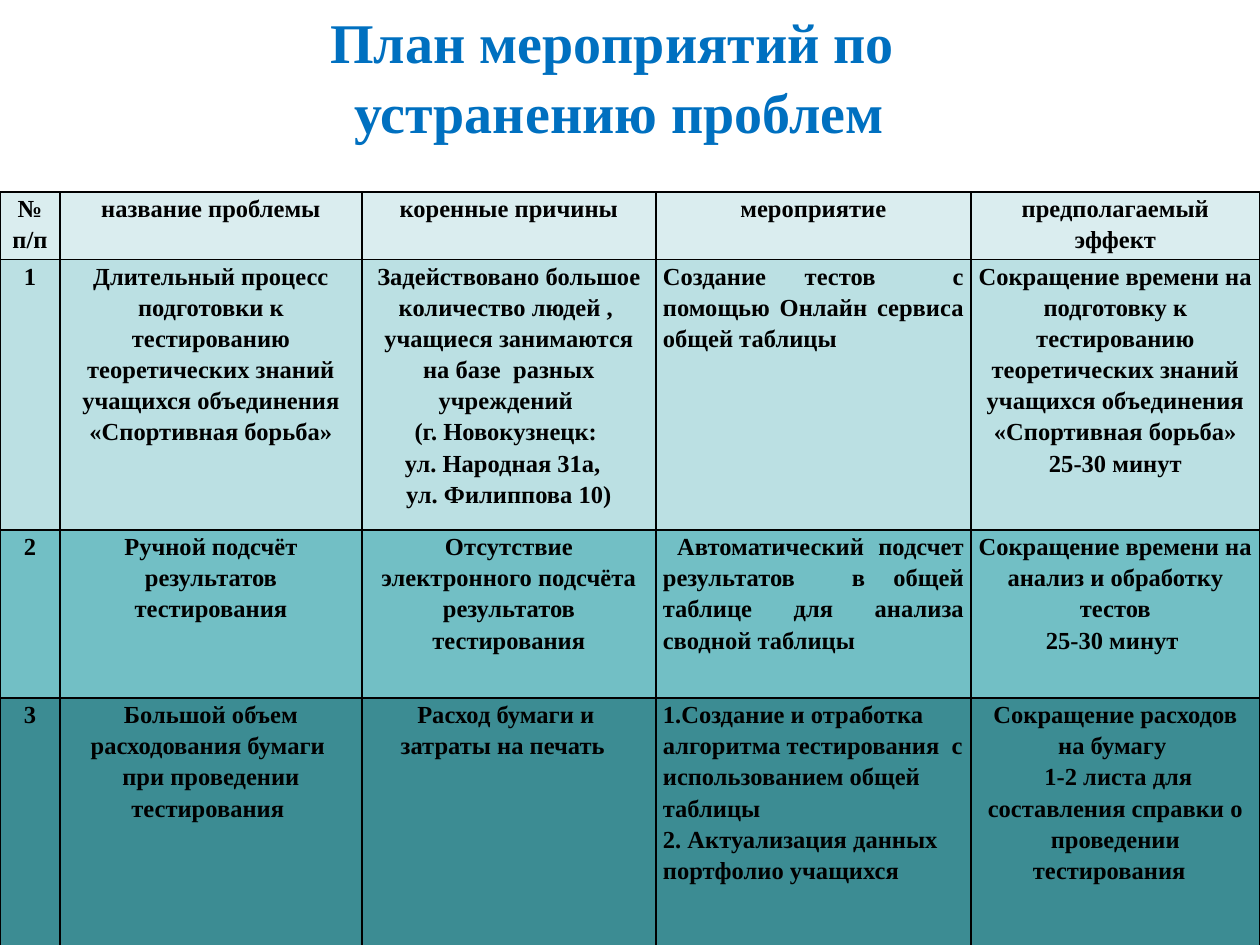
"""Build a slide with the action plan table for solving problems."""
from dataclasses import dataclass

from lxml import etree
from pptx import Presentation
from pptx import util as u
from pptx.dml.color import RGBColor
from pptx.enum import text
from pptx.oxml import ns

SCALE = 914400 / 126


@dataclass(frozen=True)
class Theme:
    font: str = "Times New Roman"
    title_size: int = 32
    table_size: int = 14
    title: str = "0070C0"
    ink: str = "000000"


@dataclass(frozen=True)
class Row:
    height: int
    fill: str
    cells: tuple[str, ...]
    action_align: text.PP_ALIGN = text.PP_ALIGN.CENTER


THEME = Theme()
ACTION_COLUMN = 3
COLUMN_WIDTHS = (60, 302, 294, 315, 289)
TITLE_LINES = ("План мероприятий по", " устранению проблем")
ROWS = (
    Row(65, "DAEDEF", (
        "№ п/п", "название проблемы", "коренные причины", "мероприятие",
        "предполагаемый эффект")),
    Row(214, "BBE0E3", (
        "1",
        "Длительный процесс подготовки к тестированию теоретических знаний "
        "учащихся объединения «Спортивная борьба»",
        "Задействовано большое количество людей ,  учащиеся занимаются на базе  "
        "разных учреждений \n(г. Новокузнецк: \nул. Народная 31а,  \nул. Филиппова 10)",
        "Создание тестов  с помощью Онлайн сервиса общей таблицы ",
        "Сокращение времени на подготовку к тестированию теоретических знаний "
        "учащихся объединения «Спортивная борьба»\n25-30 минут"),
        text.PP_ALIGN.JUSTIFY),
    Row(168, "72BFC5", (
        "2",
        "Ручной подсчёт результатов тестирования",
        "Отсутствие электронного подсчёта результатов тестирования",
        " Автоматический подсчет результатов  в общей таблице для анализа "
        "сводной таблицы",
        "Сокращение времени на анализ и обработку тестов\n25-30 минут "),
        text.PP_ALIGN.JUSTIFY),
    Row(270, "3C8C93", (
        "3",
        "Большой объем расходования бумаги  при проведении тестирования ",
        "Расход бумаги и \nзатраты на печать  ",
        "1.Создание и отработка алгоритма тестирования  с использованием "
        "общей таблицы\n2. Актуализация данных портфолио учащихся",
        "Сокращение расходов на бумагу \n 1-2 листа для составления справки "
        "о проведении тестирования  "),
        text.PP_ALIGN.LEFT),
)


def px(length: int) -> u.Emu:
    return u.Emu(round(length * SCALE))


def add_run(paragraph, content: str, size: int, color: str) -> None:
    run = paragraph.add_run()
    run.text = content
    run.font.name = THEME.font
    run.font.size = u.Pt(size)
    run.font.bold = True
    run.font.color.rgb = RGBColor.from_string(color)


def add_borders(cell) -> None:
    properties = cell._tc.get_or_add_tcPr()
    for side in ("a:lnL", "a:lnR", "a:lnT", "a:lnB"):
        line = etree.SubElement(properties, ns.qn(side), w=str(u.Pt(1)))
        fill = etree.SubElement(line, ns.qn("a:solidFill"))
        etree.SubElement(fill, ns.qn("a:srgbClr"), val=THEME.ink)


def fill_cell(cell, content: str, fill: str, align: text.PP_ALIGN) -> None:
    add_borders(cell)
    cell.fill.solid()
    cell.fill.fore_color.rgb = RGBColor.from_string(fill)
    cell.margin_left = cell.margin_right = px(7)
    cell.margin_top = cell.margin_bottom = 0
    frame = cell.text_frame
    for index, line in enumerate(content.split("\n")):
        paragraph = frame.add_paragraph() if index else frame.paragraphs[0]
        paragraph.alignment = align
        paragraph.line_spacing = 1.15
        add_run(paragraph, line, THEME.table_size, THEME.ink)


def add_title(slide) -> None:
    title = slide.shapes.title
    title.left, title.top, title.width, title.height = map(px, (315, 0, 595, 149))
    frame = title.text_frame
    frame.word_wrap = False
    frame.auto_size = text.MSO_AUTO_SIZE.SHAPE_TO_FIT_TEXT
    paragraph = frame.paragraphs[0]
    paragraph.alignment = text.PP_ALIGN.CENTER
    paragraph.line_spacing = 1.05
    for index, line in enumerate(TITLE_LINES):
        if index:
            paragraph.add_line_break()
        add_run(paragraph, line, THEME.title_size, THEME.title)


def add_plan(slide) -> None:
    height = sum(row.height for row in ROWS)
    table = slide.shapes.add_table(
        len(ROWS), len(COLUMN_WIDTHS), 0, px(192), px(sum(COLUMN_WIDTHS)), px(height)).table
    table.first_row = table.horz_banding = False
    for column, width in zip(table.columns, COLUMN_WIDTHS):
        column.width = px(width)
    for table_row, row in zip(table.rows, ROWS):
        table_row.height = px(row.height)
        for index, content in enumerate(row.cells):
            align = row.action_align if index == ACTION_COLUMN else text.PP_ALIGN.CENTER
            fill_cell(table_row.cells[index], content, row.fill, align)


def main() -> None:
    presentation = Presentation()
    presentation.slide_width, presentation.slide_height = px(1260), px(945)
    slide = presentation.slides.add_slide(presentation.slide_layouts[5])
    add_title(slide)
    add_plan(slide)
    presentation.save("out.pptx")


if __name__ == "__main__":
    main()
